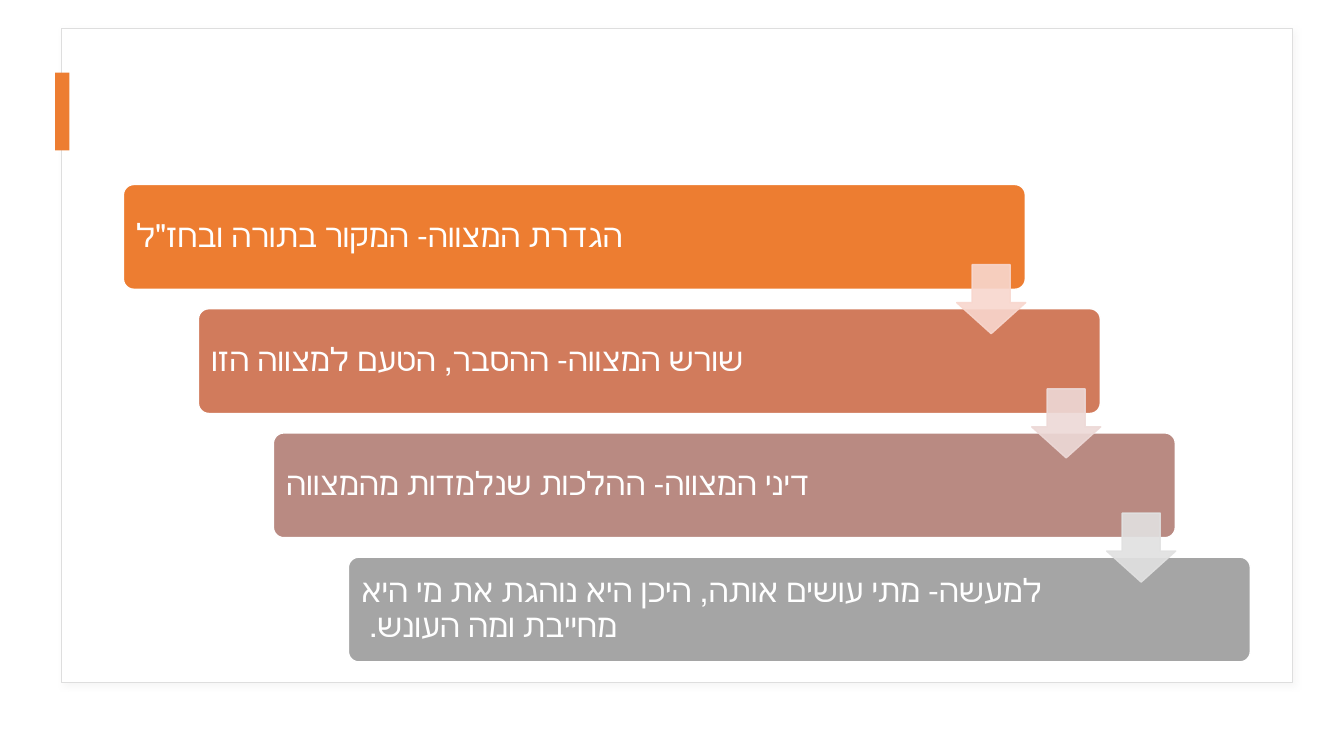
from lxml import etree
from pptx import Presentation
from pptx.dml.color import RGBColor
from pptx.enum import shapes, text
from pptx.oxml import parse_xml
from pptx.oxml.ns import nsdecls, qn
from pptx.util import Cm, Pt

STEPS = [
    ('הגדרת המצווה- המקור בתורה ובחז"ל', "ED7D31", 19.66),
    ("שורש המצווה- ההסבר, הטעם למצווה הזו", "D17B5C", 18.95),
    ("דיני המצווה- ההלכות שנלמדות מהמצווה", "B98A82", 18.95),
    ("למעשה- מתי עושים אותה, היכן היא נוהגת את מי היא מחייבת ומה העונש. ", "A5A5A5", 18.95),
]
ARROW_COLORS = ["F8D7CE", "EDD9D7", "E1E1E1"]
STEP_X, STEP_Y = 1.89, 3.13


def rgb(value):
    return RGBColor.from_string(value)


def add_box(s, kind, x, y, w, h, fill, line=None, adj=(), alpha=None):
    sp = s.shapes.add_shape(kind, Cm(x), Cm(y), Cm(w), Cm(h))
    sp.shadow.inherit = False
    for i, value in enumerate(adj):
        sp.adjustments[i] = value
    sp.fill.solid()
    sp.fill.fore_color.rgb = rgb(fill)
    if line:
        sp.line.color.rgb = rgb(line)
        sp.line.width = Pt(1)
    else:
        sp.line.fill.background()
    if alpha:
        for clr in sp._element.spPr.iter(qn("a:srgbClr")):
            etree.SubElement(clr, qn("a:alpha")).set("val", str(alpha * 1000))
    return sp


def add_shadow(sp, color, alpha, blur, dist, angle):
    effects = sp._element.spPr.find(qn("a:effectLst"))
    effects.append(parse_xml(
        f'<a:outerShdw {nsdecls("a")} blurRad="{Pt(blur)}" dist="{Pt(dist)}" '
        f'dir="{angle * 60000}" algn="tl" rotWithShape="0">'
        f'<a:srgbClr val="{color}"><a:alpha val="{alpha * 1000}"/></a:srgbClr>'
        '</a:outerShdw>'))


def add_text(s, words, x, y, w, h, size=23, font="Calibri", color="FFFFFF"):
    tf = s.shapes.add_textbox(Cm(x), Cm(y), Cm(w), Cm(h)).text_frame
    tf.word_wrap = True
    tf.vertical_anchor = text.MSO_ANCHOR.MIDDLE
    tf.margin_left = tf.margin_right = tf.margin_top = tf.margin_bottom = Cm(0.24)
    p = tf.paragraphs[0]
    p.alignment = text.PP_ALIGN.LEFT
    p.line_spacing = 0.9
    p._p.get_or_add_pPr().set("rtl", "1")
    r = p.add_run()
    r.text = words
    r.font.size = Pt(size)
    r.font.name = font
    r.font.color.rgb = rgb(color)
    props = r._r.get_or_add_rPr()
    props.set("lang", "he-IL")
    props.set("kern", "1200")


def add_step(s, i, words, color, text_width):
    x, y = 3.11 + i * STEP_X, 4.65 + i * STEP_Y
    add_box(s, shapes.MSO_SHAPE.ROUNDED_RECTANGLE, x, y, 22.73, 2.64, color, "FFFFFF", [0.1])
    add_text(s, words, x + 0.08, y + 0.08, text_width, 2.49)


def add_arrow(s, i, color):
    add_box(s, shapes.MSO_SHAPE.DOWN_ARROW, 24.11 + i * STEP_X, 6.67 + i * STEP_Y,
            1.74, 1.74, color, color, [0.55, 0.45], alpha=90)


def main():
    prs = Presentation()
    prs.slide_width, prs.slide_height = Cm(33.87), Cm(19.05)
    s = prs.slides.add_slide(prs.slide_layouts[6])
    frame = add_box(s, shapes.MSO_SHAPE.RECTANGLE, 1.55, 0.72, 31.02, 16.48, "FFFFFF", "DEDEDE")
    add_shadow(frame, "C5C3C3", 15, blur=4, dist=3, angle=45)
    add_box(s, shapes.MSO_SHAPE.RECTANGLE, 1.39, 1.83, 0.36, 1.96, "ED7D31")
    for i, step in enumerate(STEPS):
        add_step(s, i, *step)
    for i, color in enumerate(ARROW_COLORS):
        add_arrow(s, i, color)
    prs.save("out.pptx")


if __name__ == "__main__":
    main()
